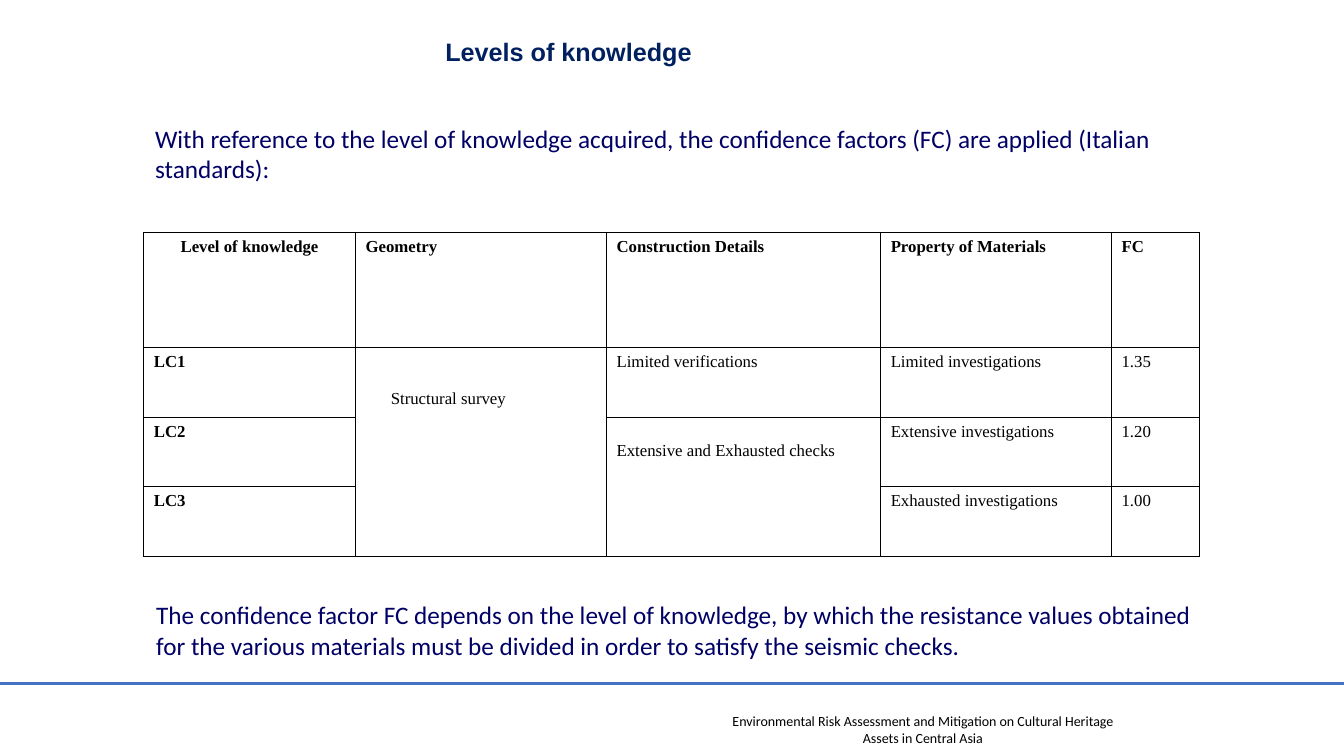
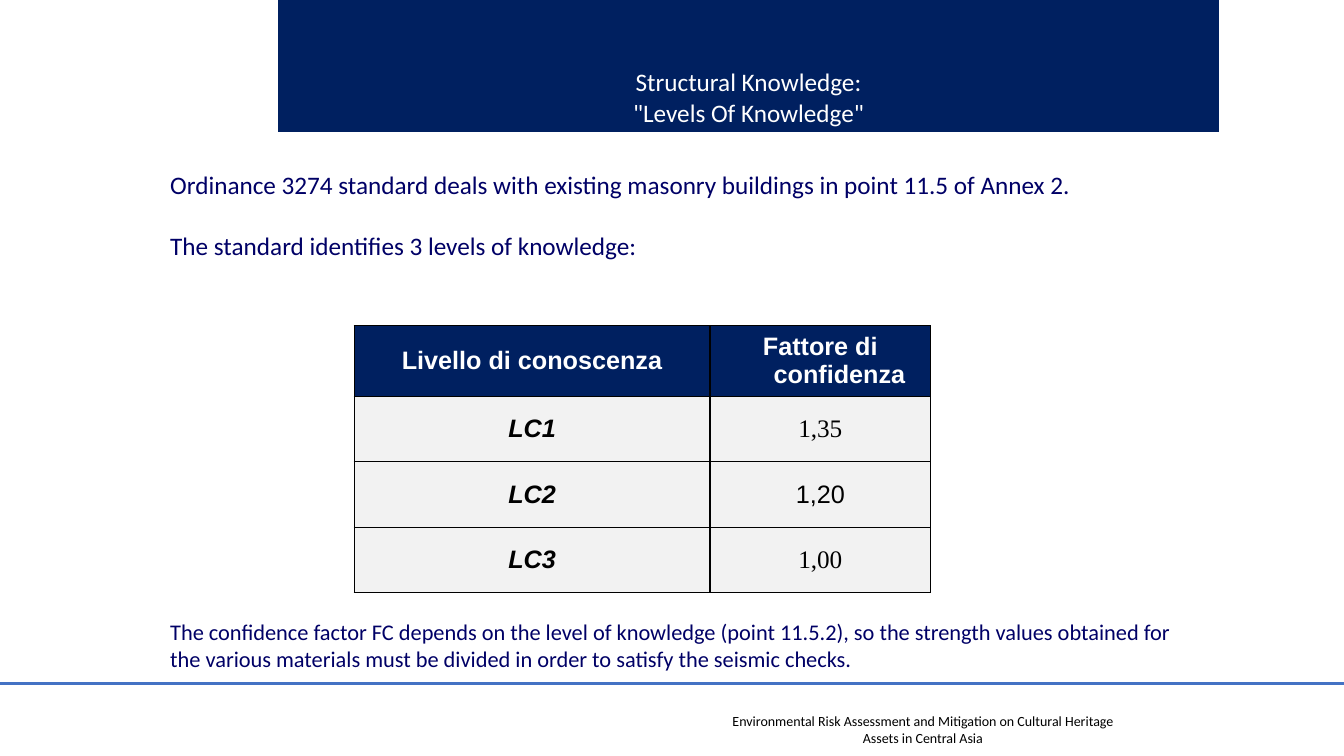
from dataclasses import dataclass, replace

from lxml.etree import SubElement
from pptx import Presentation
from pptx.dml.color import RGBColor
from pptx.enum.shapes import MSO_CONNECTOR as CONN, MSO_SHAPE as SHAPE
from pptx.enum.text import MSO_ANCHOR as ANCHOR, PP_ALIGN as ALIGN
from pptx.oxml.ns import qn
from pptx.util import Inches, Pt

WIDTH, HEIGHT = Inches(13.33), Inches(7.5)
WHITE = RGBColor(0xFF, 0xFF, 0xFF)
BLACK = RGBColor(0, 0, 0)
NAVY = RGBColor(0x00, 0x20, 0x60)
INDIGO = RGBColor(0x00, 0x00, 0x66)
BLUE = RGBColor(0x44, 0x72, 0xC4)
GREY = RGBColor(0xF2, 0xF2, 0xF2)
HANGING = Inches(0.38)


@dataclass(frozen=True)
class Style:
    font: str
    size: int
    color: RGBColor
    bold: bool = False
    italic: bool = False


BODY = Style("Calibri", 18, INDIGO)
SMALL_BODY = replace(BODY, size=16)
FOOTER = Style("Calibri", 10, BLACK)
TITLE = Style("Arial", 18, NAVY, bold=True)
BANNER = replace(BODY, color=WHITE)
SERIF = Style("Times New Roman", 12, BLACK)
SERIF_BOLD = replace(SERIF, bold=True)
HEADER = replace(TITLE, color=WHITE)
LEVEL = replace(TITLE, color=BLACK, italic=True)
FACTOR = replace(SERIF, size=18)
FACTOR_SANS = replace(FACTOR, font="Arial")


def area(left, top, width, height):
    return (int(WIDTH * left / 100), int(HEIGHT * top / 100),
            int(WIDTH * width / 100), int(HEIGHT * height / 100))


def write(tf, lines, style, align=ALIGN.LEFT, gap=0, hanging=False):
    tf.word_wrap = True
    for i, line in enumerate(lines):
        p = tf.add_paragraph() if i else tf.paragraphs[0]
        p.alignment = align
        if i and gap:
            p.space_before = Pt(gap)
        if hanging:
            pPr = p._p.get_or_add_pPr()
            pPr.set("marL", str(HANGING))
            pPr.set("indent", str(-HANGING))
        r = p.add_run()
        r.text = line
        r.font.name = style.font
        r.font.size = Pt(style.size)
        r.font.color.rgb = style.color
        r.font.bold = style.bold
        r.font.italic = style.italic


def add_text(s, box, lines, style, **layout):
    write(s.shapes.add_textbox(*box).text_frame, lines, style, **layout)


def add_heading(s, box, lines, style, fill, anchor):
    sp = s.shapes.add_shape(SHAPE.RECTANGLE, *box)
    sp.shadow.inherit = False
    sp.fill.solid()
    sp.fill.fore_color.rgb = fill
    sp.line.fill.background()
    tf = sp.text_frame
    tf.vertical_anchor = anchor
    tf.margin_top = Inches(0.03)
    write(tf, lines, style, ALIGN.CENTER)


def add_footer(s):
    add_text(s, area(52.65, 93.6, 32.03, 5.87),
             ["Environmental Risk Assessment and Mitigation on Cultural Heritage "
              "Assets in Central Asia"], FOOTER, align=ALIGN.CENTER)
    y = int(HEIGHT * 0.91) - Inches(0.04)
    rule = s.shapes.add_connector(CONN.STRAIGHT, 0, y, WIDTH, y)
    rule.line.color.rgb = BLUE
    rule.line.width = Pt(2.25)
    SubElement(rule._element.spPr, qn("a:effectLst"))


def add_borders(cell):
    tcPr = cell._tc.get_or_add_tcPr()
    for side in ("a:lnL", "a:lnR", "a:lnT", "a:lnB"):
        ln = SubElement(tcPr, qn(side), w=str(Pt(1)))
        fill = SubElement(ln, qn("a:solidFill"))
        SubElement(fill, qn("a:srgbClr"), val=str(BLACK))


def add_grid(s, box, cols, rows):
    table = s.shapes.add_table(len(rows), len(cols), *box).table
    table.first_row = table.horz_banding = False
    for col, share in zip(table.columns, cols):
        col.width = int(box[2] * share / sum(cols))
    for row, share in zip(table.rows, rows):
        row.height = int(box[3] * share / sum(rows))
    for cell in table.iter_cells():
        add_borders(cell)
    return table


def set_cell(cell, text, style, fill, align=ALIGN.LEFT, anchor=ANCHOR.TOP):
    cell.fill.solid()
    cell.fill.fore_color.rgb = fill
    cell.vertical_anchor = anchor
    if text:
        write(cell.text_frame, [text], style, align, hanging=True)


def add_levels_table(s, box):
    rows = [
        ["Level of knowledge", "Geometry", "Construction Details",
         "Property of Materials", "FC"],
        ["LC1", "Structural survey", "Limited verifications",
         "Limited investigations", "1.35"],
        ["LC2", "", "Extensive and Exhausted checks",
         "Extensive investigations", "1.20"],
        ["LC3", "", "", "Exhausted investigations", "1.00"],
    ]
    table = add_grid(s, box, [2.1, 2.49, 2.72, 2.29, 0.87], [1.14, 0.69, 0.69, 0.69])
    for i, row in enumerate(rows):
        for j, text in enumerate(row):
            style = SERIF if i and j else SERIF_BOLD
            align = ALIGN.LEFT if i or j else ALIGN.CENTER
            set_cell(table.cell(i, j), text, style, WHITE, align)
    survey, checks = table.cell(1, 1), table.cell(2, 2)
    survey.merge(table.cell(3, 1))
    checks.merge(table.cell(3, 2))
    survey.margin_left = Inches(0.35)
    survey.margin_top = Inches(0.42)
    checks.margin_top = Inches(0.24)


def add_factors_table(s, box):
    rows = [
        ("Livello di conoscenza", "Fattore di confidenza", HEADER, HEADER, NAVY),
        ("LC1", "1,35", LEVEL, FACTOR, GREY),
        ("LC2", "1,20", LEVEL, FACTOR_SANS, GREY),
        ("LC3", "1,00", LEVEL, FACTOR, GREY),
    ]
    table = add_grid(s, box, [3.53, 2.19], [0.7, 0.65, 0.65, 0.65])
    for i, (level, factor, level_style, factor_style, fill) in enumerate(rows):
        for j, (text, style) in enumerate([(level, level_style), (factor, factor_style)]):
            set_cell(table.cell(i, j), text, style, fill, ALIGN.CENTER, ANCHOR.MIDDLE)


def build_levels_slide(s):
    add_text(s, area(10.8, 15.6, 78.45, 9.47),
             ["With reference to the level of knowledge acquired, the confidence "
              "factors (FC) are applied (Italian standards):"], BODY)
    add_levels_table(s, area(10.7, 30.8, 78.53, 42.8))
    add_text(s, area(10.88, 78.67, 78.53, 9.47),
             ["The confidence factor FC depends on the level of knowledge, by which "
              "the resistance values obtained for the various materials must be "
              "divided in order to satisfy the seismic checks."], BODY)
    add_heading(s, area(12.38, 4.4, 59.85, 8.67), ["Levels of knowledge"],
                TITLE, WHITE, ANCHOR.TOP)


def build_factors_slide(s):
    add_heading(s, area(20.7, 0, 70, 17.47),
                ["Structural Knowledge:", '"Levels Of Knowledge"'],
                BANNER, NAVY, ANCHOR.BOTTOM)
    add_factors_table(s, area(26.35, 43.07, 42.9, 35.3))
    add_text(s, area(11.93, 21.73, 76.2, 13.47),
             ["Ordinance 3274 standard deals with existing masonry buildings in "
              "point 11.5 of Annex 2.",
              "The standard identifies 3 levels of knowledge:"], BODY, gap=22)
    add_text(s, area(11.93, 81.07, 76.2, 8.53),
             ["The confidence factor FC depends on the level of knowledge (point "
              "11.5.2), so the strength values obtained for the various materials "
              "must be divided in order to satisfy the seismic checks."], SMALL_BODY)


def main():
    prs = Presentation()
    prs.slide_width, prs.slide_height = WIDTH, HEIGHT
    for build in (build_levels_slide, build_factors_slide):
        s = prs.slides.add_slide(prs.slide_layouts[6])
        add_footer(s)
        build(s)
    prs.save("out.pptx")


if __name__ == "__main__":
    main()
